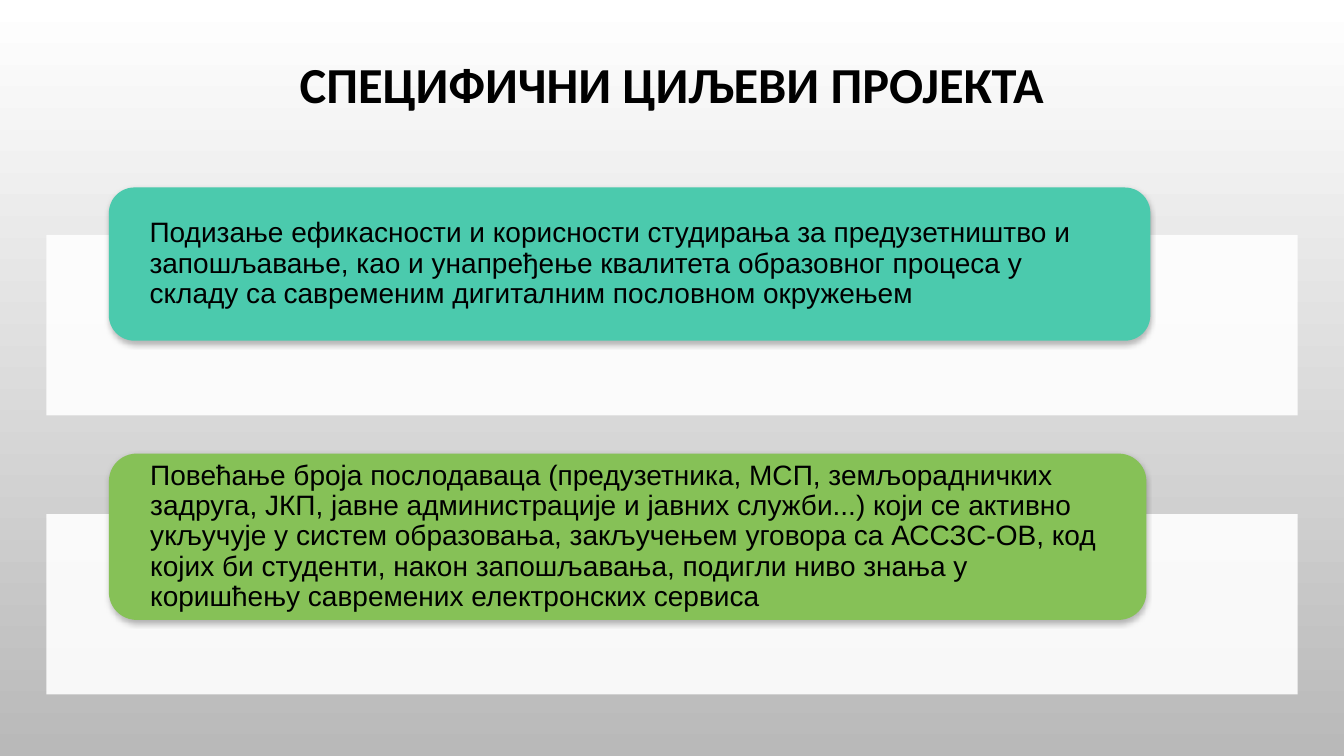
from lxml import etree
from pptx import Presentation
from pptx.dml.color import RGBColor
from pptx.enum.shapes import MSO_SHAPE
from pptx.enum.text import MSO_ANCHOR, PP_ALIGN
from pptx.oxml.ns import qn
from pptx.util import Inches, Pt

RECTANGLE = MSO_SHAPE.RECTANGLE
ROUNDED = MSO_SHAPE.ROUNDED_RECTANGLE
MIDDLE = MSO_ANCHOR.MIDDLE
LEFT, CENTER = PP_ALIGN.LEFT, PP_ALIGN.CENTER

COLORS = {
    "white": "FFFFFF",
    "gray": "B9B9B9",
    "black": "000000",
    "teal": "4BCAAD",
    "green": "86C157",
}

TITLE = "СПЕЦИФИЧНИ ЦИЉЕВИ ПРОЈЕКТА"
# band top, card top, card width, card height, color, text
GOALS = [
    (2.33, 1.86, 10.33, 1.52, "teal",
     "Подизање ефикасности и корисности студирања за предузетништво и "
     "запошљавање, као и унапређење квалитета образовног процеса у "
     "складу са савременим дигиталним пословном окружењем"),
    (5.1, 4.5, 10.29, 1.65, "green",
     "Повећање броја послодаваца (предузетника, МСП, земљорадничких "
     "задруга, ЈКП, јавне администрације и јавних служби...) који се активно "
     "укључује у систем образовања, закључењем уговора са АССЗС-ОВ, код "
     "којих би студенти, након запошљавања, подигли ниво знања у "
     "коришћењу савремених електронских сервиса"),
]


class GoalsSlide:
    def __init__(self, presentation):
        self.slide = presentation.slides.add_slide(presentation.slide_layouts[6])

    def color(self, name):
        return RGBColor.from_string(COLORS[name])

    def background(self, top, bottom):
        fill = self.slide.background.fill
        fill.gradient()
        fill.gradient_angle = 270
        for stop, name, position in zip(fill.gradient_stops, (top, bottom), (0, 1)):
            stop.color.rgb = self.color(name)
            stop.position = position

    def set_text(self, shape, text, font_name, size, alignment, side_inset, bold=False):
        frame = shape.text_frame
        frame.text = text
        frame.word_wrap = True
        frame.vertical_anchor = MIDDLE
        frame.margin_left = frame.margin_right = Inches(side_inset)
        frame.margin_top = frame.margin_bottom = 0
        paragraph = frame.paragraphs[0]
        paragraph.alignment = alignment
        paragraph.line_spacing = 0.9
        font = paragraph.runs[0].font
        font.name, font.size, font.bold = font_name, Pt(size), bold
        font.color.rgb = self.color("black")

    def title(self, text, left, top, width, height):
        box = self.slide.shapes.add_textbox(*map(Inches, (left, top, width, height)))
        self.set_text(box, text, "Calibri", 36, CENTER, 0.1, bold=True)

    def block(self, kind, left, top, width, height, color):
        shape = self.slide.shapes.add_shape(
            kind, *map(Inches, (left, top, width, height)))
        shape.shadow.inherit = False
        shape.fill.solid()
        shape.fill.fore_color.rgb = self.color(color)
        shape.line.fill.background()
        return shape

    def band(self, top):
        """Add a wide white strip, 90 % opaque."""
        shape = self.block(RECTANGLE, 0.46, top, 12.41, 1.79, "white")
        fill_color = shape._element.spPr.find(qn("a:solidFill"))[0]
        etree.SubElement(fill_color, qn("a:alpha"), val="90000")

    def card(self, top, width, height, color, text):
        shape = self.block(ROUNDED, 1.08, top, width, height, color)
        self.drop_shadow(shape)
        self.set_text(shape, text, "Arial", 20, LEFT, 0.33)

    def drop_shadow(self, shape):
        effects = shape._element.spPr.find(qn("a:effectLst"))
        shadow = etree.SubElement(
            effects, qn("a:outerShdw"), blurRad=str(Pt(4)), dist=str(Pt(2)),
            dir="5400000", algn="ctr", rotWithShape="0")
        shadow_color = etree.SubElement(shadow, qn("a:srgbClr"), val=COLORS["black"])
        etree.SubElement(shadow_color, qn("a:alpha"), val="28000")


def main():
    presentation = Presentation()
    presentation.slide_width = Inches(13.33)
    presentation.slide_height = Inches(7.5)
    goals_slide = GoalsSlide(presentation)
    goals_slide.background("white", "gray")
    goals_slide.title(TITLE, 1.79, 0.17, 9.75, 1.4)
    for band_top, *card in GOALS:
        goals_slide.band(band_top)
        goals_slide.card(*card)
    presentation.save("out.pptx")


if __name__ == "__main__":
    main()
